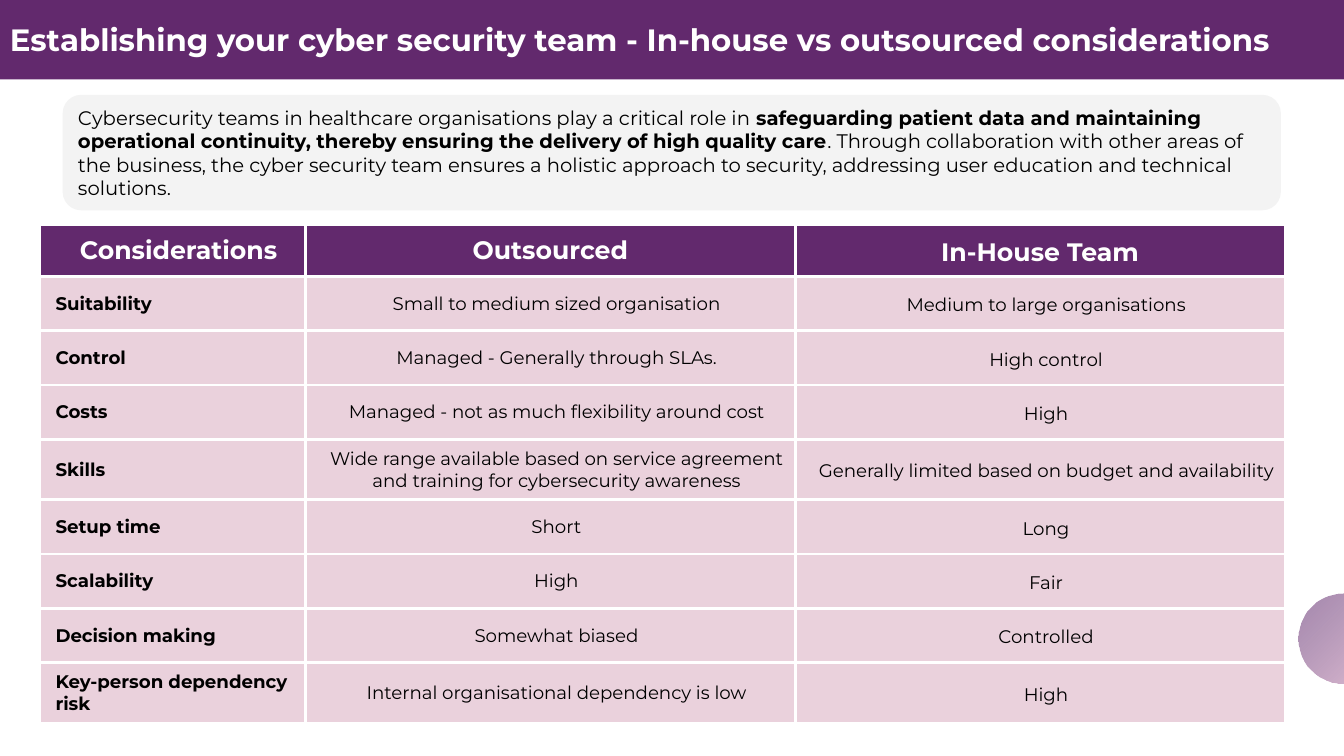
import pptx
import pptx.util
import pptx.oxml
import pptx.dml.color
import pptx.enum.shapes
import pptx.enum.text
from pptx.util import Cm

# Content
TITLE = "Establishing your cyber security team - In-house vs outsourced considerations"
INTRO = [
    ("Cybersecurity teams in healthcare organisations play a critical role in ", False),
    ("safeguarding patient data and maintaining operational continuity, "
     "thereby ensuring the delivery of high quality care", True),
    (". Through collaboration with other areas of the business, the cyber security team "
     "ensures a holistic approach to security, addressing user education and technical "
     "solutions.", False),
]
ROWS = [
    ("Considerations", "Outsourced", "In-House Team"),
    ("Suitability", "Small to medium sized organisation", "Medium to large organisations"),
    ("Control", "Managed - Generally through SLAs.", "High control"),
    ("Costs", "Managed - not as much flexibility around cost", "High"),
    ("Skills", "Wide range available based on service agreement and training for "
     "cybersecurity awareness", "Generally limited based on budget and availability"),
    ("Setup time", "Short", "Long"),
    ("Scalability", "High", "Fair"),
    ("Decision making", "Somewhat biased", "Controlled"),
    ("Key-person dependency risk", "Internal organisational dependency is low", "High"),
]
COLOURS = {"purple": "62296D", "pink": "EAD1DC", "grey": "F3F3F3", "white": "FFFFFF",
           "black": "000000", "glow_pink": "D3A5C3", "glow_purple": "5F2D6F"}
FONT = "Montserrat"
COLUMN_WIDTHS = (Cm(6.7), Cm(12.34), Cm(12.34))
HEADER_HEIGHT, ROW_HEIGHT = Cm(1.19), Cm(1.37)
DRAWING_NS = 'xmlns:a="http://schemas.openxmlformats.org/drawingml/2006/main"'
ALIGN = pptx.enum.text.PP_ALIGN
MIDDLE = pptx.enum.text.MSO_ANCHOR.MIDDLE
SHAPES = pptx.enum.shapes.MSO_SHAPE


def rgb(name):
    return pptx.dml.color.RGBColor.from_string(COLOURS[name])


def fill_solid(item, name):
    item.fill.solid()
    item.fill.fore_color.rgb = rgb(name)


def add_span(para, text, size, colour, bold):
    span = para.add_run()
    span.text = text
    span.font.name = FONT
    span.font.size = pptx.util.Pt(size)
    span.font.bold = bold
    span.font.color.rgb = rgb(colour)


def add_plain_shape(page, kind, left, top, width, height):
    shape = page.shapes.add_shape(kind, left, top, width, height)
    shape.shadow.inherit = False
    shape.line.fill.background()
    return shape


def add_accent(page):
    circle = add_plain_shape(page, SHAPES.OVAL, Cm(32.72), Cm(14.96), Cm(2.26), Cm(2.26))
    circle.fill.background()
    stops = "".join(
        f'<a:gs pos="{position}"><a:srgbClr val="{COLOURS[name]}">'
        f'<a:alpha val="{alpha}"/></a:srgbClr></a:gs>'
        for position, name, alpha in ((0, "glow_pink", 71000), (100000, "glow_purple", 56000)))
    gradient = pptx.oxml.parse_xml(
        f'<a:gradFill {DRAWING_NS}><a:gsLst>{stops}</a:gsLst><a:path path="circle">'
        '<a:fillToRect l="100000" t="100000"/></a:path></a:gradFill>')
    properties = circle.element.spPr
    empty_fill = properties.find(pptx.oxml.ns.qn("a:noFill"))
    properties.replace(empty_fill, gradient)


def add_borders(cell):
    properties = cell._tc.get_or_add_tcPr()
    for index, side in enumerate("LRTB"):
        properties.insert(index, pptx.oxml.parse_xml(
            f'<a:ln{side} {DRAWING_NS} w="28575"><a:solidFill>'
            f'<a:srgbClr val="{COLOURS["white"]}"/></a:solidFill></a:ln{side}>'))


def add_comparison(page):
    height = HEADER_HEIGHT + ROW_HEIGHT * (len(ROWS) - 1)
    table = page.shapes.add_table(len(ROWS), len(COLUMN_WIDTHS), Cm(1), Cm(5.67),
                                  sum(COLUMN_WIDTHS), height).table
    for column, width in zip(table.columns, COLUMN_WIDTHS):
        column.width = width
    for row_index, texts in enumerate(ROWS):
        header = row_index == 0
        table.rows[row_index].height = HEADER_HEIGHT if header else ROW_HEIGHT
        for column_index, text in enumerate(texts):
            label = column_index == 0
            cell = table.cell(row_index, column_index)
            fill_solid(cell, "purple" if header else "pink")
            add_borders(cell)
            cell.vertical_anchor = MIDDLE
            cell.margin_left = cell.margin_right = Cm(0.1)
            cell.margin_top = cell.margin_bottom = Cm(0.2)
            para = cell.text_frame.paragraphs[0]
            para.alignment = ALIGN.LEFT if label and not header else ALIGN.CENTER
            if label or not header:
                para._p.get_or_add_pPr().set("marL", str(Cm(0.3)))
            if column_index == 2:
                para.line_spacing = 1.15
            add_span(para, text, 18 if header else 13,
                     "white" if header else "black", header or label)


def add_intro(page):
    box = add_plain_shape(page, SHAPES.ROUNDED_RECTANGLE,
                          Cm(1.58), Cm(2.39), Cm(30.7), Cm(2.91))
    box.adjustments[0] = 0.16
    fill_solid(box, "grey")
    frame = box.text_frame
    frame.word_wrap = True
    frame.vertical_anchor = MIDDLE
    frame.margin_left = frame.margin_right = Cm(0.25)
    frame.margin_top = frame.margin_bottom = Cm(0.25)
    para = frame.paragraphs[0]
    para.alignment = ALIGN.LEFT
    for text, bold in INTRO:
        add_span(para, text, 14, "black", bold)


def add_title(page, width):
    title = page.shapes.title
    title.left, title.top, title.width, title.height = 0, 0, width, Cm(2)
    fill_solid(title, "purple")
    frame = title.text_frame
    frame.auto_size = pptx.enum.text.MSO_AUTO_SIZE.NONE
    frame.word_wrap = True
    frame.vertical_anchor = MIDDLE
    frame.margin_left = frame.margin_right = Cm(0.25)
    para = frame.paragraphs[0]
    para.alignment = ALIGN.LEFT
    para.line_spacing = 1.0
    add_span(para, TITLE, 22, "white", True)


def main():
    deck = pptx.Presentation()
    deck.slide_width, deck.slide_height = Cm(33.87), Cm(19.05)
    page = deck.slides.add_slide(deck.slide_layouts.get_by_name("Title Only"))
    add_accent(page)
    add_comparison(page)
    add_intro(page)
    add_title(page, deck.slide_width)
    deck.save("out.pptx")


if __name__ == "__main__":
    main()
